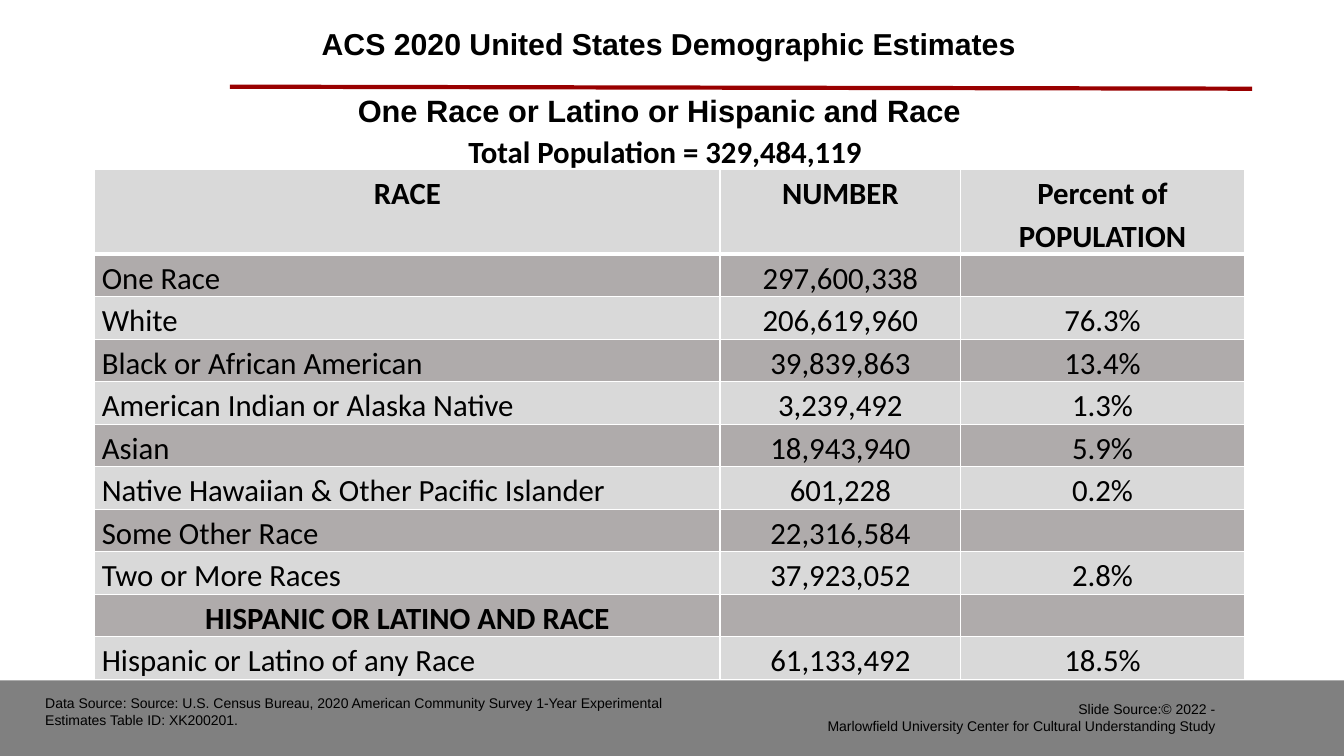
from lxml.etree import SubElement
from pptx import Presentation
from pptx.dml.color import RGBColor
from pptx.enum.shapes import MSO_CONNECTOR, MSO_SHAPE
from pptx.enum.text import MSO_ANCHOR, PP_ALIGN
from pptx.oxml.ns import qn
from pptx.util import Inches, Pt

# Content
TITLE = "ACS 2020 United States Demographic Estimates"
SUBTITLE = "One Race or Latino or Hispanic and Race"
TOTAL = "Total Population = 329,484,119"
HEADER = ("RACE", "NUMBER", "Percent of\nPOPULATION")
SECTION = "HISPANIC OR LATINO AND RACE"
ROWS = [
    ("One Race", "297,600,338", ""),
    ("White", "206,619,960", "76.3%"),
    ("Black or African American", "39,839,863", "13.4%"),
    ("American Indian or Alaska Native", "3,239,492", "1.3%"),
    ("Asian", "18,943,940", "5.9%"),
    ("Native Hawaiian & Other Pacific Islander", "601,228", "0.2%"),
    ("Some Other Race", "22,316,584", ""),
    ("Two or More Races", "37,923,052", "2.8%"),
    (SECTION, "", ""),
    ("Hispanic or Latino of any Race", "61,133,492", "18.5%"),
]
DATA_SOURCE = ("Data Source: Source: U.S. Census Bureau, 2020 American Community Survey "
               "1-Year Experimental Estimates Table ID: XK200201.")
SLIDE_SOURCE = ("Slide Source:© 2022 -\n"
                "Marlowfield University Center for Cultural Understanding Study")

# Look and grid
COLORS = {"text": "000000", "rule": "990000", "light": "D9D9D9",
          "dark": "AFABAB", "border": "FFFFFF", "footer": "808080"}
SLIDE_W, SLIDE_H = 13.33, 7.5
FOOTER_H = SLIDE_H / 10
LEFT, TABLE_TOP, ROW_H = 0.94, 1.68, 0.42
COLS = (6.2, 2.39, 2.81)


def rgb(name):
    return RGBColor.from_string(COLORS[name])


def write(tf, text, size, font="Arial", bold=False, align=PP_ALIGN.LEFT, spacing=None):
    tf.word_wrap = True
    for i, line in enumerate(text.split("\n")):
        p = tf.add_paragraph() if i else tf.paragraphs[0]
        p.alignment = align
        p.line_spacing = spacing
        if line:
            r = p.add_run()
            r.text = line
            r.font.size, r.font.name, r.font.bold = Pt(size), font, bold
            r.font.color.rgb = rgb("text")


def add_text(box, text, size, **style):
    sp = slide.shapes.add_textbox(*map(Inches, box))
    write(sp.text_frame, text, size, **style)


def set_borders(cell, bottom):
    tcPr = cell._tc.get_or_add_tcPr()
    for side, width in (("L", 1), ("R", 1), ("T", 1), ("B", bottom)):
        ln = SubElement(tcPr, qn(f"a:ln{side}"), w=str(Pt(width)))
        fill = SubElement(ln, qn("a:solidFill"))
        SubElement(fill, qn("a:srgbClr"), val=COLORS["border"])


prs = Presentation()
prs.slide_width, prs.slide_height = Inches(SLIDE_W), Inches(SLIDE_H)
slide = prs.slides.add_slide(prs.slide_layouts[5])

# Title and rule
title = slide.shapes.title
title.left, title.top, title.width, title.height = map(Inches, (3.09, 0.06, 9.5, 0.79))
title.text_frame.vertical_anchor = MSO_ANCHOR.MIDDLE
write(title.text_frame, TITLE, 21.6, bold=True, spacing=0.9)

rule = slide.shapes.add_connector(MSO_CONNECTOR.STRAIGHT,
                                  *map(Inches, (2.28, 0.86, 12.42, 0.88)))
rule.line.color.rgb = rgb("rule")
rule.line.width = Pt(3)
SubElement(rule._element.spPr, qn("a:effectLst"))

# Subtitles
add_text((0.89, 0.86, 11.3, 0.47), SUBTITLE, 22, bold=True, align=PP_ALIGN.CENTER)
add_text((0.9, 1.27, 11.39, 0.47), TOTAL, 22, font="Calibri", bold=True,
         align=PP_ALIGN.CENTER)

# Table: the header is two rows high, body rows alternate dark and light
table = slide.shapes.add_table(
    len(ROWS) + 1, len(COLS), Inches(LEFT), Inches(TABLE_TOP),
    Inches(sum(COLS)), Inches(ROW_H * (len(ROWS) + 2))).table
for column, width in zip(table.columns, COLS):
    column.width = Inches(width)
for i, values in enumerate([HEADER] + ROWS):
    table.rows[i].height = Inches(ROW_H if i else 2 * ROW_H)
    for j, value in enumerate(values):
        cell = table.cell(i, j)
        cell.margin_left = cell.margin_right = Inches(0.07)
        cell.margin_top = cell.margin_bottom = 0
        set_borders(cell, 1 if i else 3)
        cell.fill.solid()
        cell.fill.fore_color.rgb = rgb("dark" if i % 2 else "light")
        heading = i == 0 or value == SECTION
        write(cell.text_frame, value, 22, font="Calibri", bold=heading, spacing=1.15,
              align=PP_ALIGN.CENTER if heading or j else PP_ALIGN.LEFT)

# Footer
footer = slide.shapes.add_shape(MSO_SHAPE.RECTANGLE, 0, Inches(SLIDE_H - FOOTER_H),
                                Inches(SLIDE_W), Inches(FOOTER_H))
footer.shadow.inherit = False
footer.fill.solid()
footer.fill.fore_color.rgb = rgb("footer")
footer.line.fill.background()
add_text((0.35, 6.84, 6.32, 0.44), DATA_SOURCE, 10)
add_text((7.92, 6.9, 4.23, 0.44), SLIDE_SOURCE, 10, align=PP_ALIGN.RIGHT)

prs.save("out.pptx")
